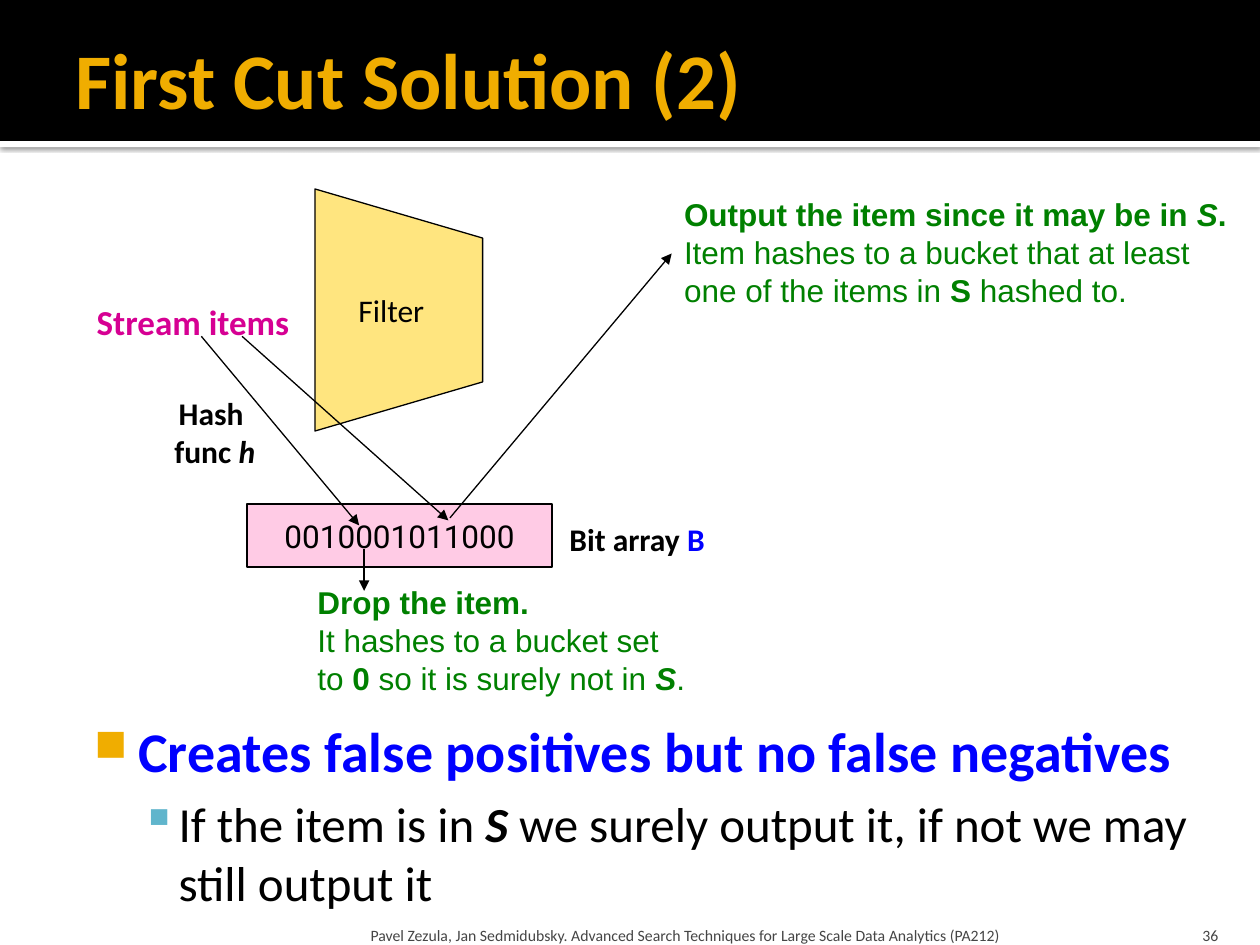
from dataclasses import dataclass, field

from lxml.etree import SubElement
from pptx import Presentation
from pptx.dml.color import RGBColor
from pptx.enum.shapes import MSO_CONNECTOR, MSO_SHAPE
from pptx.enum.text import MSO_ANCHOR, PP_ALIGN
from pptx.oxml.ns import qn
from pptx.util import Cm, Pt

COLORS = {
    "black": "000000", "white": "FFFFFF", "gold": "F0AD00", "blue": "0000FF",
    "teal": "60B5CC", "gray": "454545", "magenta": "D60093", "green": "008000",
    "yellow": "FFCC00", "pink": "FF99CC",
}
B, I, BI, PLAIN = ({"bold": b, "italic": i} for b, i in ((1, 0), (0, 1), (1, 1), (0, 0)))


@dataclass
class Label:
    """Text box with its place in centimetres, paragraphs of runs and format."""
    at: tuple
    paras: list
    fmt: dict = field(default_factory=dict)


@dataclass
class Arrow:
    """Arrow between two points in centimetres."""
    start: tuple
    end: tuple


@dataclass
class Bullet:
    """Bullet character with its colour, size and indents."""
    char: str
    color: str
    percent: int
    margin: float
    hang: float
    level: int = 0
    before: float = 0


GREEN = {"font": "Arial", "color": "green", "wrap": False}
NOTE = {"size": 9, "color": "gray", "anchor": MSO_ANCHOR.BOTTOM}

LABELS = [
    Label((1.27, 0.2, 22.86, 2.74), [[("First Cut Solution (2)", B)]],
          {"size": 45, "color": "gold", "anchor": MSO_ANCHOR.MIDDLE, "insets": (0.25, 0.13, 0.13, 0.13)}),
    Label((1.7, 5.92, 4.65, 1.12), [[("Stream items", B)]],
          {"size": 20, "color": "magenta", "wrap": False}),
    Label((13.54, 3.81, 11.56, 2.57),
          [[("Output the item since it may be in ", B), ("S", BI), (".", B)],
           [("Item hashes to a bucket that at least \none of the items in ", PLAIN),
            ("S", B), (" hashed to.", PLAIN)]], GREEN),
    Label((3.15, 7.82, 2.36, 1.8), [[("Hash \nfunc ", B), ("h", BI)]], {"align": PP_ALIGN.CENTER}),
    Label((6.15, 11.63, 8, 2.57),
          [[("Drop the item.", B)],
           [("It hashes to a bucket set \nto ", PLAIN), ("0", B),
            (" so it is surely not in ", PLAIN), ("S", BI), (".", PLAIN)]], GREEN),
    Label((11.23, 10.36, 3.43, 1.02), [[("Bit array ", B), ("B", {**B, "color": "blue"})]],
          {"wrap": False}),
    Label((1.42, 14.2, 23.27, 4.42),
          [[("Creates false positives but no false negatives", {**B, "size": 32, "color": "blue"})],
           [("If the item is in ", PLAIN), ("S", BI),
            (" we surely output it, if not we may still output it", PLAIN)]],
          {"size": 28, "insets": (0.15, 0.25, 0.25, 0.13),
           "bullets": [Bullet("■", "gold", 80, 1.22, 0.89),
                       Bullet("▪", "teal", 100, 2.03, 0.76, 1, 5.6)]}),
    Label((7.34, 18.29, 15.29, 0.76),
          [[("Pavel Zezula, Jan Sedmidubsky. Advanced Search Techniques for "
             "Large Scale Data Analytics (PA212)", PLAIN)]],
          {**NOTE, "insets": (0.13, 0.13, 0.13, 0)}),
    Label((22.78, 18.29, 2.03, 0.76), [[("36", PLAIN)]],
          {**NOTE, "align": PP_ALIGN.RIGHT, "insets": (0.25, 0.13, 0.25, 0)}),
]

ARROWS = [
    Arrow((4.88, 6.78), (9.04, 10.49)),
    Arrow((9.07, 10.44), (13.54, 5.11)),
    Arrow((4.06, 6.78), (7.24, 10.59)),
    Arrow((7.34, 11.07), (7.34, 11.91)),
]


def rgb(name: str) -> RGBColor:
    """Return a named colour."""
    return RGBColor.from_string(COLORS[name])


def set_bullet(p, b: Bullet) -> None:
    """Give a paragraph its bullet and indents."""
    p.level = b.level
    p.space_before = Pt(b.before)
    pPr = p._p.get_or_add_pPr()
    pPr.set("marL", str(Cm(b.margin)))
    pPr.set("indent", str(-Cm(b.hang)))
    SubElement(SubElement(pPr, qn("a:buClr")), qn("a:srgbClr"), val=COLORS[b.color])
    SubElement(pPr, qn("a:buSzPct"), val=str(b.percent * 1000))
    SubElement(pPr, qn("a:buChar"), char=b.char)


def write(sp, paras: list, *, size: float = 18, font: str = "Calibri", color: str = "black",
          align=PP_ALIGN.LEFT, anchor=MSO_ANCHOR.TOP, wrap: bool = True,
          insets: tuple = (0.25, 0.13, 0.25, 0.13), bullets: tuple = ()) -> None:
    """Write paragraphs of formatted runs into a shape."""
    tf = sp.text_frame
    tf.word_wrap, tf.vertical_anchor = wrap, anchor
    tf.margin_left, tf.margin_top, tf.margin_right, tf.margin_bottom = map(Cm, insets)
    for n, runs in enumerate(paras):
        p = tf.add_paragraph() if n else tf.paragraphs[0]
        p.alignment = align
        if bullets:
            set_bullet(p, bullets[n])
        for text, own in runs:
            for k, line in enumerate(text.split("\n")):
                if k:
                    p.add_line_break()
                r = p.add_run()
                r.text = line
                f = r.font
                f.name, f.size = font, Pt(own.get("size", size))
                f.bold, f.italic = bool(own["bold"]), bool(own["italic"])
                f.color.rgb = rgb(own.get("color", color))


def paint(sp, fill: str, line: str = "", alpha: int = 100) -> None:
    """Set fill, opacity and outline of a shape."""
    sp.shadow.inherit = False
    sp.fill.solid()
    sp.fill.fore_color.rgb = rgb(fill)
    if alpha < 100:
        clr = sp._element.spPr.find(qn("a:solidFill"))[0]
        SubElement(clr, qn("a:alpha"), val=str(alpha * 1000))
    if line:
        sp.line.color.rgb, sp.line.width = rgb(line), Pt(0.75)
    else:
        sp.line.fill.background()


def add_rect(s, at: tuple, fill: str, line: str = "", alpha: int = 100):
    """Add a painted rectangle."""
    sp = s.shapes.add_shape(MSO_SHAPE.RECTANGLE, *map(Cm, at))
    paint(sp, fill, line, alpha)
    return sp


def add_arrow(s, a: Arrow) -> None:
    """Add a thin arrow with a triangle head."""
    c = s.shapes.add_connector(MSO_CONNECTOR.STRAIGHT, *map(Cm, a.start + a.end))
    c.line.color.rgb, c.line.width = rgb("black"), Pt(0.75)
    spPr = c._element.spPr
    SubElement(spPr.find(qn("a:ln")), qn("a:tailEnd"), type="triangle")
    SubElement(spPr, qn("a:effectLst"))


def add_header(s) -> None:
    """Add the black title band and its shadowed white edge."""
    edge = add_rect(s, (0, 2.84, 25.4, 0.13), "white")
    shadow = SubElement(edge._element.spPr.find(qn("a:effectLst")), qn("a:outerShdw"),
                        blurRad=str(Pt(2.5)), dist=str(Pt(0.8)), dir="5400000",
                        algn="tl", rotWithShape="0")
    clr = SubElement(shadow, qn("a:srgbClr"), val=COLORS["black"])
    SubElement(clr, qn("a:alpha"), val="60000")
    add_rect(s, (0, 0, 25.4, 2.84), "black")


def add_filter(s) -> None:
    """Add the funnel that stands for the filter."""
    pts = [(6.35, 8.69), (9.73, 7.7), (9.73, 4.8), (6.35, 3.81)]
    (x, y), *rest = [tuple(map(Cm, pt)) for pt in pts]
    fb = s.shapes.build_freeform(x, y)
    fb.add_line_segments(rest, close=True)
    sp = fb.convert_to_shape()
    paint(sp, "yellow", "black", 50)
    write(sp, [[("Filter", PLAIN)]], align=PP_ALIGN.CENTER, anchor=MSO_ANCHOR.MIDDLE,
          wrap=False, insets=(0.13, 0.13, 0.43, 0.13))


def main() -> None:
    """Build the slide and save it."""
    prs = Presentation()
    prs.slide_width, prs.slide_height = Cm(25.4), Cm(19.05)
    s = prs.slides.add_slide(prs.slide_layouts[6])
    add_header(s)
    add_filter(s)
    bits = add_rect(s, (4.98, 10.16, 6.15, 1.27), "pink", "black", 50)
    write(bits, [[("0010001011000", PLAIN)]], font="Roboto", align=PP_ALIGN.CENTER,
          anchor=MSO_ANCHOR.MIDDLE, wrap=False)
    for a in ARROWS:
        add_arrow(s, a)
    for lb in LABELS:
        write(s.shapes.add_textbox(*map(Cm, lb.at)), lb.paras, **lb.fmt)
    prs.save("out.pptx")


if __name__ == "__main__":
    main()
